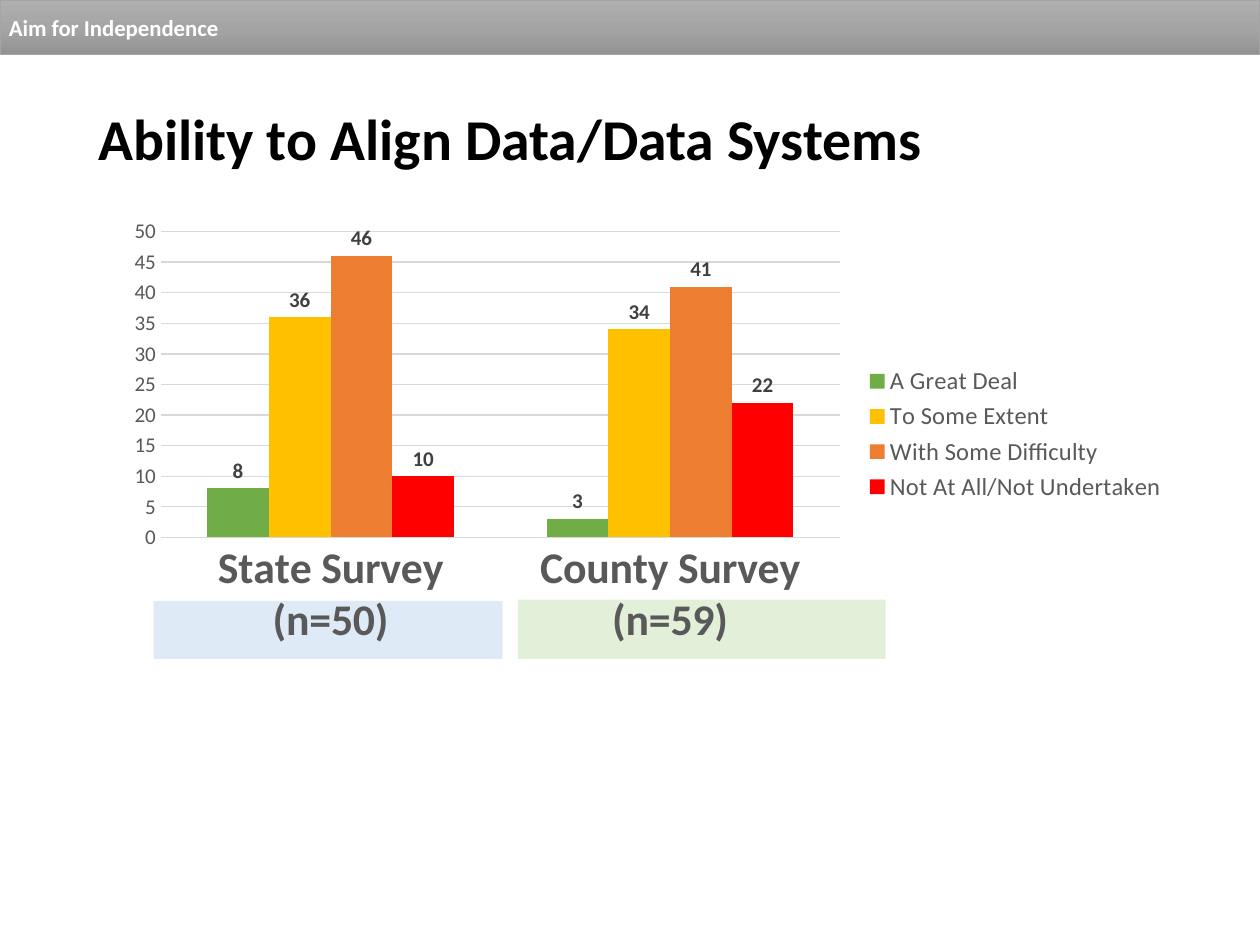
from copy import deepcopy
from dataclasses import dataclass

from lxml import etree
from pptx import Presentation
from pptx.chart.data import CategoryChartData
from pptx.dml.color import RGBColor
from pptx.enum.chart import XL_CHART_TYPE, XL_LABEL_POSITION, XL_LEGEND_POSITION, XL_TICK_MARK
from pptx.enum.shapes import MSO_SHAPE
from pptx.enum.text import MSO_ANCHOR, PP_ALIGN
from pptx.oxml.ns import qn
from pptx.util import Inches, Pt

CLUSTERED = XL_CHART_TYPE.COLUMN_CLUSTERED
OUTSIDE_END = XL_LABEL_POSITION.OUTSIDE_END
LEGEND_RIGHT = XL_LEGEND_POSITION.RIGHT
NO_TICK = XL_TICK_MARK.NONE
RECTANGLE = MSO_SHAPE.RECTANGLE
MIDDLE = MSO_ANCHOR.MIDDLE
LEFT = PP_ALIGN.LEFT


@dataclass(frozen=True)
class Theme:
    font: str = "Calibri"
    white: str = "FFFFFF"
    black: str = "000000"
    gray: str = "A5A5A5"
    grid: str = "D9D9D9"
    axis_text: str = "595959"
    label_text: str = "404040"
    state_band: str = "DEEBF7"
    county_band: str = "E2F0D9"
    banner: tuple = ("AFAFAF", "A5A5A5", "939393")
    answers: tuple = ("70AD47", "FFC000", "ED7D31", "FF0000")
    title_size: int = 33
    category_size: int = 25
    legend_size: int = 14
    banner_size: int = 13
    value_size: int = 12
    chart_size: int = 10


theme = Theme()


def style_font(font, size, color, bold=False):
    font.name = theme.font
    font.size = Pt(size)
    font.bold = bold
    font.color.rgb = RGBColor.from_string(color)


def add_line(shape, text, size, color):
    frame = shape.text_frame
    frame.word_wrap = True
    frame.vertical_anchor = MIDDLE
    paragraph = frame.paragraphs[0]
    paragraph.alignment = LEFT
    run = paragraph.add_run()
    run.text = text
    style_font(run.font, size, color, bold=True)
    return paragraph


deck = Presentation()
deck.slide_width = Inches(10)
deck.slide_height = Inches(7.5)
slide = deck.slides.add_slide(deck.slide_layouts[6])

banner = slide.shapes.add_shape(RECTANGLE, 0, 0, Inches(10), Inches(0.43))
banner.shadow.inherit = False
banner.fill.gradient()
banner.fill.gradient_angle = 270
stop_list = banner._element.spPr.find(qn("a:gradFill")).find(qn("a:gsLst"))
stop_list.insert(1, deepcopy(stop_list[0]))
for index, (stop, color) in enumerate(zip(banner.fill.gradient_stops, theme.banner)):
    stop.position = index / 2
    stop.color.rgb = RGBColor.from_string(color)
banner.line.color.rgb = RGBColor.from_string(theme.gray)
banner.line.width = Pt(0.5)
banner.text_frame.margin_left = banner.text_frame.margin_right = Inches(0.07)
banner.text_frame.margin_top = banner.text_frame.margin_bottom = Inches(0.04)
add_line(banner, "Aim for Independence", theme.banner_size, theme.white)

for left, top, width, height, color in (
    (1.22, 4.77, 2.77, 0.46, theme.state_band),
    (4.11, 4.76, 2.92, 0.47, theme.county_band),
):
    survey_band = slide.shapes.add_shape(
        RECTANGLE, Inches(left), Inches(top), Inches(width), Inches(height)
    )
    survey_band.shadow.inherit = False
    survey_band.fill.solid()
    survey_band.fill.fore_color.rgb = RGBColor.from_string(color)
    survey_band.line.fill.background()

title = slide.shapes.add_textbox(Inches(0.69), Inches(0.4), Inches(8.62), Inches(1.45))
title.text_frame.margin_left = title.text_frame.margin_right = Inches(0.09)
title.text_frame.margin_top = title.text_frame.margin_bottom = Inches(0.04)
heading = add_line(title, "Ability to Align Data/Data Systems", theme.title_size, theme.black)
heading.line_spacing = 0.9

survey = CategoryChartData()
survey.categories = ["State Survey (n=50)", "County Survey (n=59)"]
for answer, counts in (
    ("A Great Deal", (8, 3)),
    ("To Some Extent", (36, 34)),
    ("With Some Difficulty", (46, 41)),
    ("Not At All/Not Undertaken", (10, 22)),
):
    survey.add_series(answer, counts)

chart = slide.shapes.add_chart(
    CLUSTERED, Inches(0.94), Inches(1.66), Inches(8.42), Inches(3.57), survey
).chart
style_font(chart.font, theme.chart_size, theme.black)
chart.has_title = False
chart.has_legend = True
chart.legend.position = LEGEND_RIGHT
chart.legend.include_in_layout = False
style_font(chart.legend.font, theme.legend_size, theme.axis_text)

plot = chart.plots[0]
plot.gap_width = 150
plot.overlap = 0
plot.vary_by_categories = False
for series, color in zip(plot.series, theme.answers):
    series.format.fill.solid()
    series.format.fill.fore_color.rgb = RGBColor.from_string(color)
    labels = series.data_labels
    labels.show_value = True
    labels.position = OUTSIDE_END
    style_font(labels.font, theme.value_size, theme.label_text, bold=True)

surveys = chart.category_axis
counts_axis = chart.value_axis
for axis in (surveys, counts_axis):
    axis.major_tick_mark = NO_TICK
    axis.minor_tick_mark = NO_TICK
style_font(surveys.tick_labels.font, theme.category_size, theme.axis_text, bold=True)
style_font(counts_axis.tick_labels.font, theme.value_size, theme.axis_text)
counts_axis.minimum_scale = 0
counts_axis.maximum_scale = 50
counts_axis.major_unit = 5
counts_axis.format.line.fill.background()
for line in (surveys.format.line, counts_axis.major_gridlines.format.line):
    line.color.rgb = RGBColor.from_string(theme.grid)
    line.width = Pt(0.75)

plot_area = chart._chartSpace.chart.plotArea
for automatic in plot_area.findall(qn("c:layout")):
    plot_area.remove(automatic)
layout = etree.Element(qn("c:layout"))
plot_area.insert(0, layout)
manual = etree.SubElement(layout, qn("c:manualLayout"))
for tag, value in (
    ("layoutTarget", "inner"),
    ("xMode", "edge"),
    ("yMode", "edge"),
    ("x", "0.04"),
    ("y", "0.05"),
    ("w", "0.64"),
    ("h", "0.68"),
):
    etree.SubElement(manual, qn(f"c:{tag}")).set("val", value)

deck.save("out.pptx")
